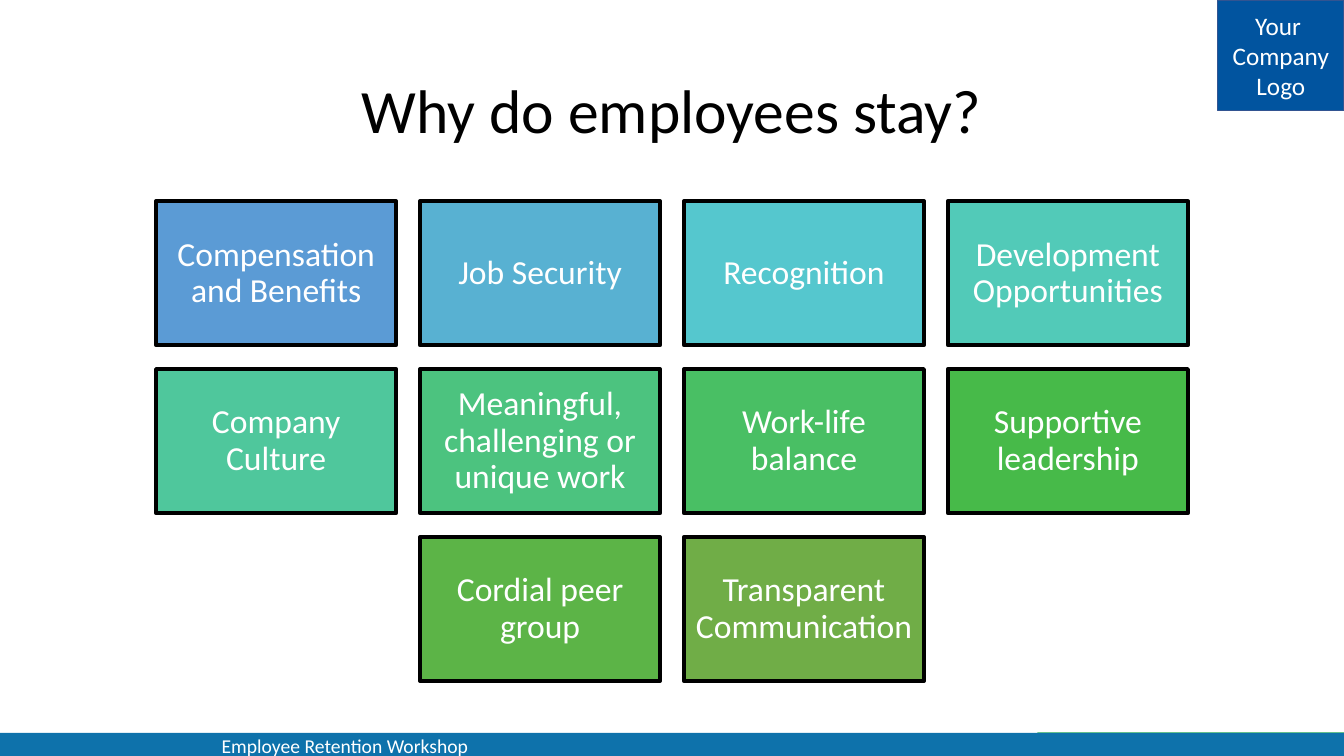
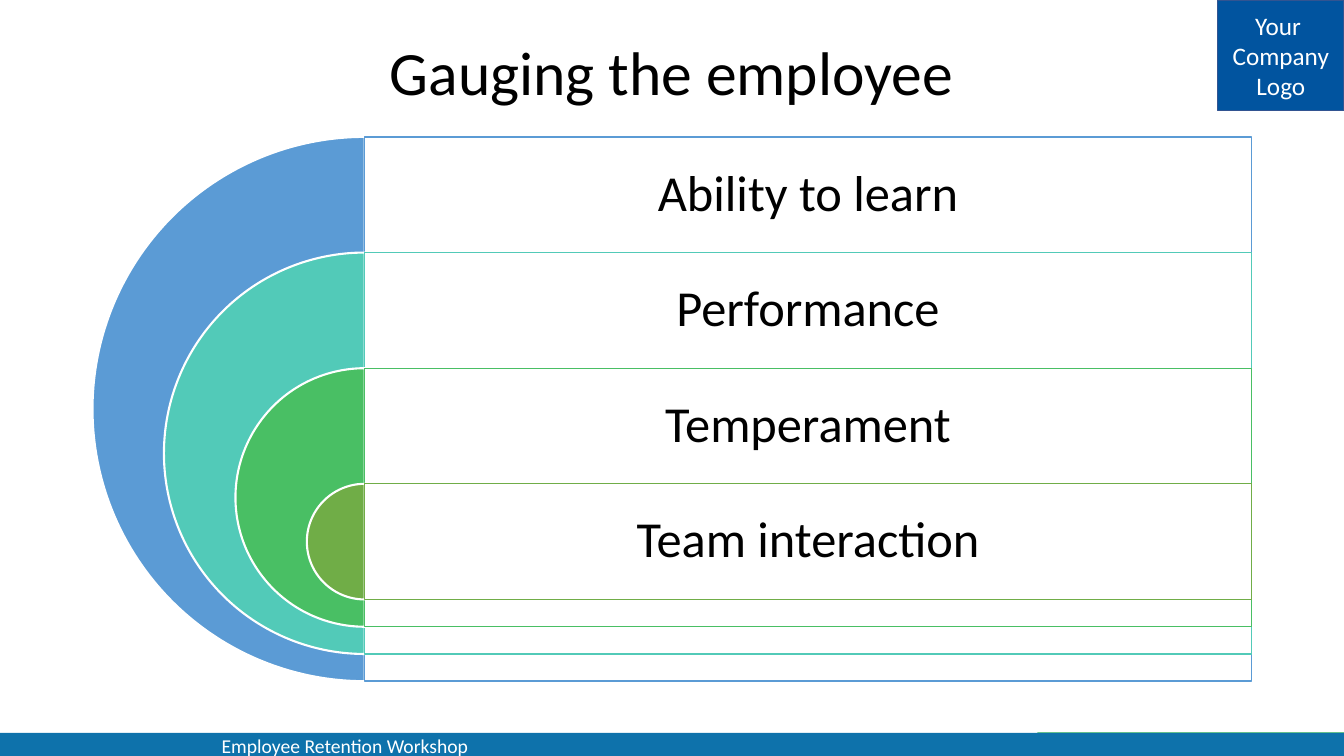
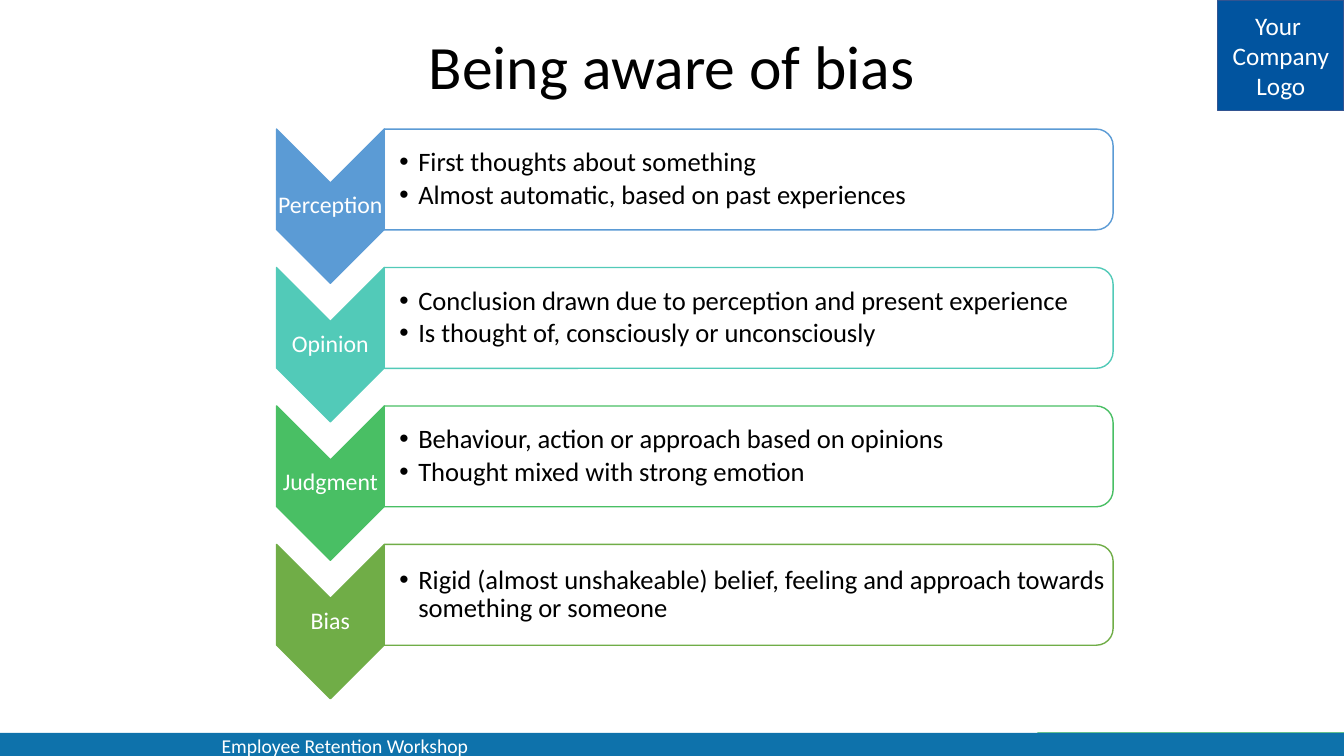
from dataclasses import dataclass

from lxml.etree import SubElement
from pptx import Presentation
from pptx.dml.color import RGBColor
from pptx.enum.shapes import MSO_SHAPE as Preset
from pptx.enum.text import MSO_ANCHOR as Anchor, PP_ALIGN as Align
from pptx.oxml.ns import qn
from pptx.util import Pt


@dataclass(frozen=True)
class Theme:
    font: str = "Calibri"
    white: str = "FFFFFF"
    black: str = "000000"
    footer_blue: str = "0E72AB"
    footer_green: str = "26B24B"
    badge_fill: str = "01549F"
    badge_line: str = "325491"
    spectrum: tuple = (
        "5B9BD5", "58B1D2", "55C7CE", "52CAB8", "4FC79C",
        "4CC37F", "49BF64", "47BA49", "5CB447", "70AD47",
    )
    title_size: int = 44
    ring_size: int = 36
    card_size: int = 24
    point_size: int = 19
    badge_size: int = 18
    stage_size: int = 17
    footer_size: int = 14

    @property
    def accents(self):
        return self.spectrum[::3]


THEME = Theme()
SLIDE_WIDTH, SLIDE_HEIGHT = 960, 540


def write(holder, text, *, size, color=THEME.white, align=Align.CENTER,
          anchor=Anchor.MIDDLE, insets=(7.2, 3.6, 7.2, 3.6),
          line_spacing=0.9, space_after=0, bullet_indent=0):
    frame = holder.text_frame
    frame.word_wrap = True
    frame.vertical_anchor = anchor
    (frame.margin_left, frame.margin_top,
     frame.margin_right, frame.margin_bottom) = map(Pt, insets)
    for index, line in enumerate(text.split("\n")):
        paragraph = frame.paragraphs[0] if index == 0 else frame.add_paragraph()
        if bullet_indent:
            properties = paragraph._p.get_or_add_pPr()
            properties.set("marL", str(Pt(bullet_indent)))
            properties.set("indent", str(-Pt(bullet_indent)))
            SubElement(properties, qn("a:buFont")).set("typeface", "Arial")
            SubElement(properties, qn("a:buChar")).set("char", "•")
        paragraph.alignment = align
        paragraph.line_spacing = line_spacing
        paragraph.space_after = Pt(space_after)
        run = paragraph.add_run()
        run.text = line
        run.font.name = THEME.font
        run.font.size = Pt(size)
        run.font.color.rgb = RGBColor.from_string(color)


class Deck:
    def __init__(self, theme):
        self.theme = theme
        self.presentation = Presentation()
        self.presentation.slide_width = Pt(SLIDE_WIDTH)
        self.presentation.slide_height = Pt(SLIDE_HEIGHT)
        self.slide = None

    def start(self, title, title_top):
        theme = self.theme
        self.slide = self.presentation.slides.add_slide(self.presentation.slide_layouts[6])
        self.shape(Preset.RECTANGLE, 741, 523.2, 219, 16.8, theme.footer_green)
        self.shape(Preset.RECTANGLE, 0, 523.5, SLIDE_WIDTH, 16.5, theme.footer_blue)
        self.text("Employee Retention Workshop", 151.2, 520.6, 258.5, 24.2,
                  size=theme.footer_size, align=Align.LEFT, anchor=Anchor.TOP,
                  line_spacing=1)
        badge = self.shape(Preset.RECTANGLE, 869.8, 0, 90.2, 79,
                           theme.badge_fill, theme.badge_line)
        write(badge, "Your \nCompany\nLogo", size=theme.badge_size, line_spacing=1)
        self.text(title, 66, title_top, 828, 104.4,
                  size=theme.title_size, color=theme.black)

    def shape(self, preset, left, top, width, height, fill, line=None, line_width=1,
              alpha=None):
        shape = self.slide.shapes.add_shape(preset, Pt(left), Pt(top), Pt(width), Pt(height))
        shape.shadow.inherit = False
        shape.fill.solid()
        shape.fill.fore_color.rgb = RGBColor.from_string(fill)
        if alpha is not None:
            color = shape.fill._xPr.find(qn("a:solidFill"))[0]
            SubElement(color, qn("a:alpha")).set("val", str(alpha * 1000))
        if line:
            shape.line.color.rgb = RGBColor.from_string(line)
            shape.line.width = Pt(line_width)
        else:
            shape.line.fill.background()
        return shape

    def quarter_turned(self, preset, left, top, width, height, fill, line, alpha=None):
        shift = (width - height) / 2
        shape = self.shape(preset, left + shift, top - shift, height, width,
                           fill, line, alpha=alpha)
        shape.rotation = 90
        return shape

    def text(self, text, left, top, width, height, **style):
        box = self.slide.shapes.add_textbox(Pt(left), Pt(top), Pt(width), Pt(height))
        write(box, text, **style)

    def card_grid(self, rows, top, width, height, gap):
        colors = iter(self.theme.spectrum)
        for row_index, row in enumerate(rows):
            left = (SLIDE_WIDTH - len(row) * (width + gap) + gap) / 2
            for column, reason in enumerate(row):
                card = self.shape(Preset.RECTANGLE, left + column * (width + gap),
                                  top + row_index * (height + gap), width, height,
                                  next(colors), self.theme.black, 3)
                write(card, reason, size=self.theme.card_size, insets=(7.2,) * 4)

    def nested_rings(self, qualities, center, top, diameter, band, panel_width):
        inset = 10.8
        step = (diameter - band) / (len(qualities) - 1)
        for index, (quality, color) in enumerate(zip(qualities, self.theme.accents)):
            size = diameter - index * step
            ring_top = top + index * band
            ring = self.shape(Preset.PIE, center - size / 2, ring_top, size, size,
                              color, self.theme.white, 1.5)
            ring.adjustments[0], ring.adjustments[1] = 54, 162
            panel = self.shape(Preset.RECTANGLE, center, ring_top, panel_width, size,
                               self.theme.white, color, alpha=90)
            write(panel, quality, size=self.theme.ring_size, color=self.theme.black,
                  insets=(inset, inset, inset, size - band + inset))

    def chevron_list(self, stages, left, top, pitch):
        width, height = 77, 110.2
        panel_width, panel_height, text_height = 520.6, 72, 64.8
        for index, ((stage, points), color) in enumerate(zip(stages, self.theme.accents)):
            row_top = top + index * pitch
            self.quarter_turned(Preset.CHEVRON, left, row_top, width, height, color, color)
            self.text(stage, left, row_top + width / 2, width, height - width,
                      size=self.theme.stage_size, insets=(0.7,) * 4)
            self.quarter_turned(Preset.ROUND_2_SAME_RECTANGLE, left + width, row_top,
                                panel_width, panel_height, self.theme.white, color, alpha=90)
            self.text(points, left + width, row_top + (panel_height - text_height) / 2,
                      517, text_height, size=self.theme.point_size,
                      color=self.theme.black, align=Align.LEFT, space_after=2.85,
                      insets=(10.8, 0.7, 0.7, 0.7), bullet_indent=13.5)


def main():
    deck = Deck(THEME)

    deck.start("Why do employees stay?", 28.8)
    deck.card_grid([
        ["Compensation and Benefits", "Job Security", "Recognition",
         "Development Opportunities"],
        ["Company Culture", "Meaningful, challenging or unique work",
         "Work-life balance", "Supportive leadership"],
        ["Cordial peer group", "Transparent Communication"],
    ], top=143.8, width=171.4, height=102.8, gap=17.1)

    deck.start("Gauging the employee", 1.4)
    deck.nested_rings(
        ["Ability to learn", "Performance", "Temperament", "Team interaction"],
        center=260.5, top=97.8, diameter=388.8, band=82.6, panel_width=633.5)

    deck.start("Being aware of bias", -2.9)
    deck.chevron_list([
        ("Perception",
         "First thoughts about something\n"
         "Almost automatic, based on past experiences"),
        ("Opinion",
         "Conclusion drawn due to perception and present experience\n"
         "Is thought of, consciously or unconsciously"),
        ("Judgment",
         "Behaviour, action or approach based on opinions\n"
         "Thought mixed with strong emotion"),
        ("Bias",
         "Rigid (almost unshakeable) belief, feeling and approach towards "
         "something or someone"),
    ], left=197.5, top=92.2, pitch=98.9)

    deck.presentation.save("out.pptx")


if __name__ == "__main__":
    main()
